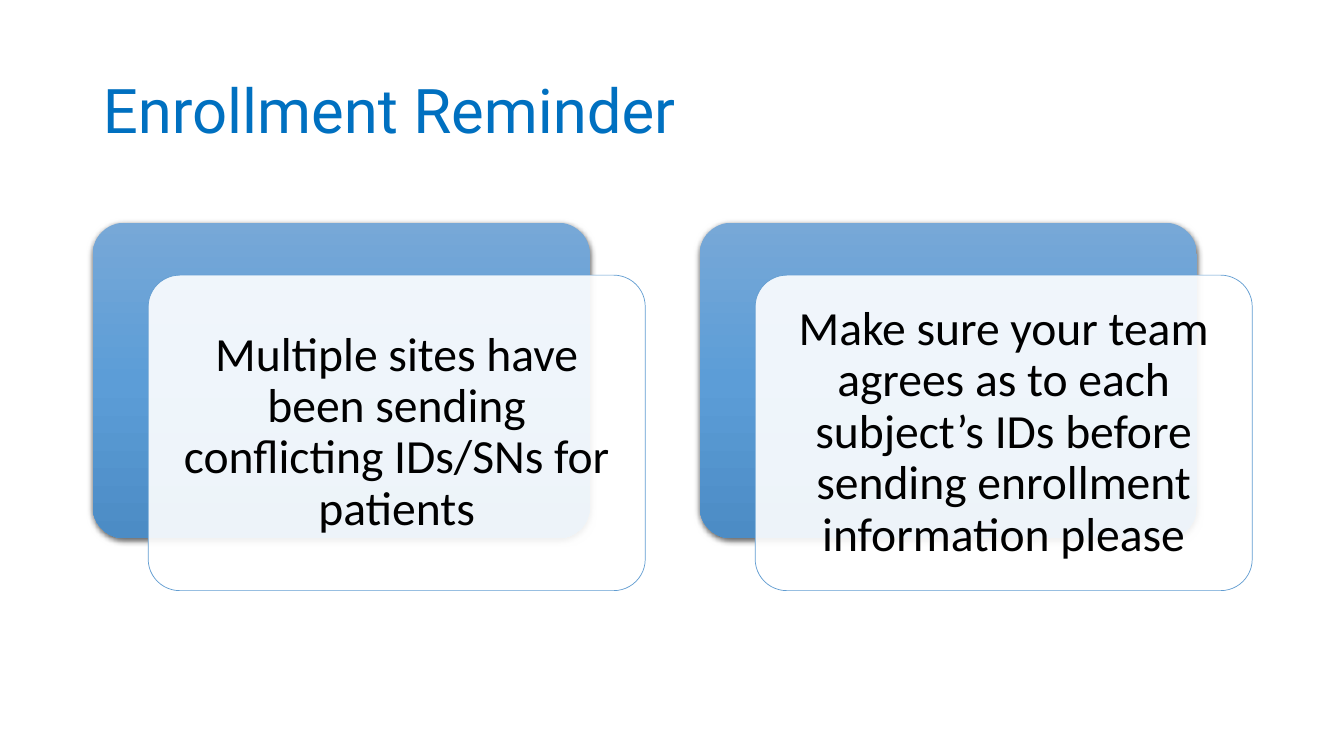
import copy

import pptx
import pptx.util
from lxml import etree
from pptx.dml.color import RGBColor
from pptx.enum.shapes import MSO_SHAPE
from pptx.enum.text import MSO_ANCHOR, PP_ALIGN
from pptx.oxml.ns import qn
from pptx.util import Inches

TITLE_BLUE = RGBColor(0x00, 0x70, 0xC0)
GRADIENT = [
    (0, RGBColor(0x77, 0xA8, 0xD7)),
    (0.5, RGBColor(0x5C, 0x9D, 0xD7)),
    (1, RGBColor(0x4C, 0x8C, 0xC5)),
]
OUTLINE_BLUE = RGBColor(0x62, 0x9D, 0xD1)
WHITE = RGBColor(0xFF, 0xFF, 0xFF)
BLACK = RGBColor(0x00, 0x00, 0x00)

LEFT, TOP, PITCH = 0.92, 2.21, 6.02
CARD_W, CARD_H = 4.93, 3.13
OFFSET_X, OFFSET_Y = 0.55, 0.52
REMINDERS = [
    "Multiple sites have been sending conflicting IDs/SNs for patients",
    "Make sure your team agrees as to each subject’s IDs before "
    "sending enrollment information please",
]


def add_card(x, y):
    sp = slide.shapes.add_shape(
        MSO_SHAPE.ROUNDED_RECTANGLE,
        Inches(x), Inches(y), Inches(CARD_W), Inches(CARD_H))
    sp.adjustments[0] = 0.1
    sp.shadow.inherit = False
    return sp


def add_alpha(color, percent):
    """Set the opacity of a colour element."""
    etree.SubElement(color, qn("a:alpha"), val=str(percent * 1000))


prs = pptx.Presentation()
prs.slide_width, prs.slide_height = Inches(13.33), Inches(7.5)
slide = prs.slides.add_slide(prs.slide_layouts[5])

title = slide.shapes.title
title.left, title.top = Inches(LEFT), Inches(0.4)
title.width, title.height = Inches(11.5), Inches(1.45)
tf = title.text_frame
tf.text = "Enrollment Reminder"
tf.vertical_anchor = MSO_ANCHOR.MIDDLE
p = tf.paragraphs[0]
p.alignment = PP_ALIGN.LEFT
p.line_spacing = 0.9
p.font.name = "Roboto"
p.font.size = pptx.util.Pt(44)
p.font.color.rgb = TITLE_BLUE

for i, reminder in enumerate(REMINDERS):
    x = LEFT + i * PITCH

    back = add_card(x, TOP)
    back.line.fill.background()
    back.fill.gradient()
    back.fill.gradient_angle = 270
    stop_list = back._element.spPr.find(".//" + qn("a:gsLst"))
    stop_list.append(copy.deepcopy(stop_list[-1]))
    for stop, (position, color) in zip(back.fill.gradient_stops, GRADIENT):
        stop.position = position
        stop.color.rgb = color
    effects = back._element.spPr.find(qn("a:effectLst"))
    shadow = etree.SubElement(
        effects, qn("a:outerShdw"), blurRad=str(pptx.util.Pt(4.5)),
        dist=str(pptx.util.Pt(1.5)), dir="5400000", rotWithShape="0")
    add_alpha(etree.SubElement(shadow, qn("a:srgbClr"), val=str(BLACK)), 63)

    front = add_card(x + OFFSET_X, TOP + OFFSET_Y)
    front.fill.solid()
    front.fill.fore_color.rgb = WHITE
    add_alpha(front._element.spPr.find(qn("a:solidFill"))[0], 90)
    front.line.color.rgb = OUTLINE_BLUE
    front.line.width = pptx.util.Pt(0.5)

    tf = front.text_frame
    tf.word_wrap = True
    tf.vertical_anchor = MSO_ANCHOR.MIDDLE
    tf.margin_left = tf.margin_right = Inches(0.14)
    tf.margin_top = tf.margin_bottom = Inches(0.14)
    p = tf.paragraphs[0]
    p.text = reminder
    p.alignment = PP_ALIGN.CENTER
    p.line_spacing = 0.9
    p.font.name = "Calibri"
    p.font.size = pptx.util.Pt(34)
    p.font.color.rgb = BLACK

prs.save("out.pptx")
